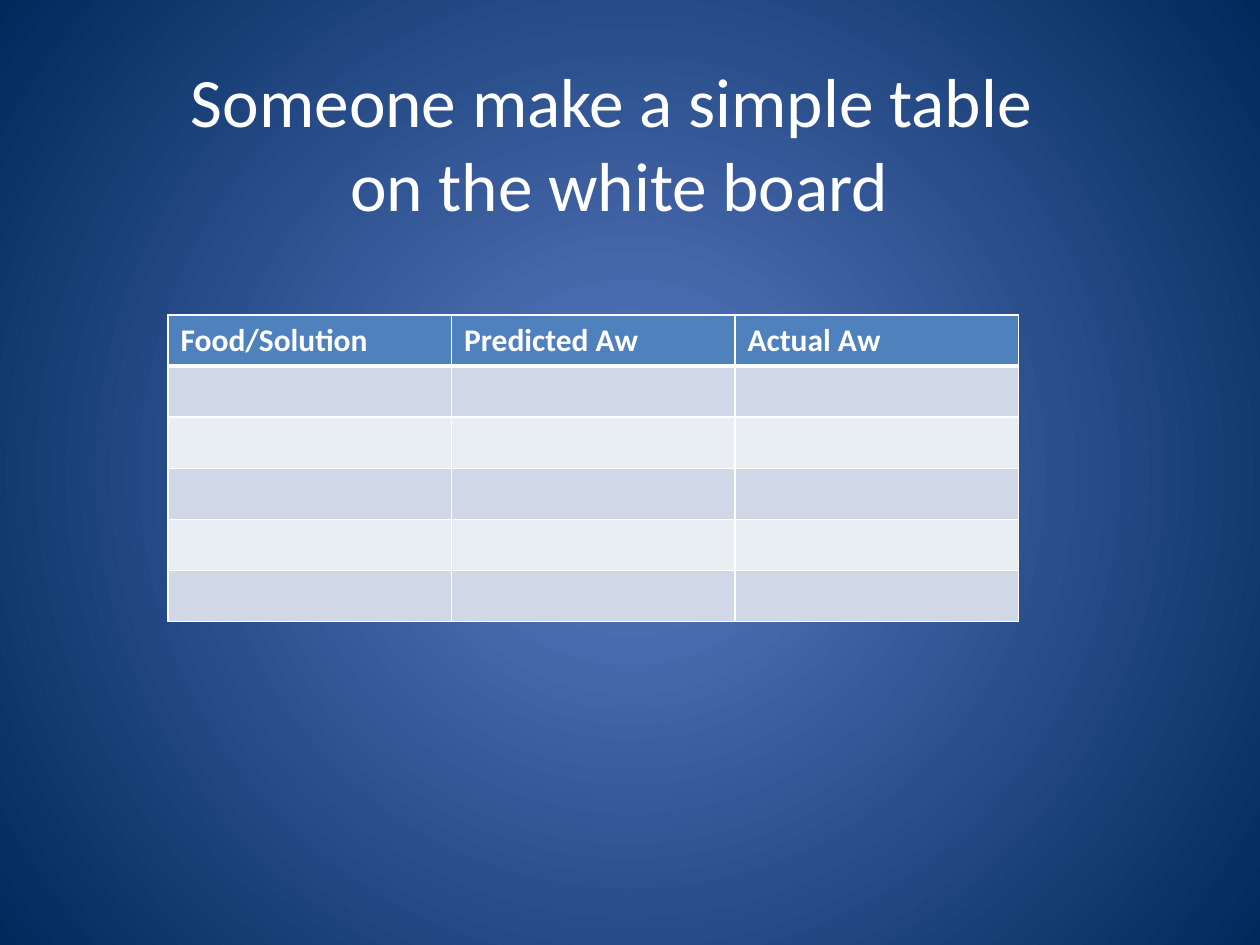
from lxml.etree import SubElement as Sub
from pptx import Presentation
from pptx.dml.color import RGBColor as RGB
from pptx.enum.text import MSO_ANCHOR as Anchor, PP_ALIGN as Align
from pptx.oxml.ns import qn
from pptx.util import Inches, Pt

COLS, ROWS = 120, 90
WHITE, HEAD = "FFFFFF", "4F81BD"
BANDS = ("D0D8E8", "E9EDF4")


def tint(code):
    return RGB.from_string(code)


class Board:
    font = "Calibri"

    def __init__(self, deck):
        self.slide = deck.slides.add_slide(deck.slide_layouts[6])
        self.unit_x = deck.slide_width / COLS
        self.unit_y = deck.slide_height / ROWS

    def box(self, col, row, wide, high):
        """Turn grid columns and rows into slide lengths."""
        return (round(col * self.unit_x), round(row * self.unit_y),
                round(wide * self.unit_x), round(high * self.unit_y))

    def glow(self, inner, outer):
        """Fill the background with a gradient that spreads from the centre."""
        fill = self.slide.background.fill
        fill.gradient()
        for stop, code in zip(fill.gradient_stops, (inner, outer)):
            stop.color.rgb = tint(code)
        grad = self.slide.element.find(".//" + qn("a:gradFill"))
        grad.remove(grad.find(qn("a:lin")))
        ring = Sub(grad, qn("a:path"), {"path": "circle"})
        Sub(ring, qn("a:fillToRect"), dict.fromkeys("ltrb", "50000"))

    def add_text(self, para, text, size, bold=False):
        run = para.add_run()
        run.text = text
        run.font.name, run.font.size = self.font, Pt(size)
        run.font.bold = bold
        run.font.color.rgb = tint(WHITE)

    def title(self, lines, area, size):
        frame = self.slide.shapes.add_textbox(*self.box(*area)).text_frame
        frame.word_wrap = True
        frame.vertical_anchor = Anchor.MIDDLE
        para = frame.paragraphs[0]
        para.alignment = Align.CENTER
        for i, line in enumerate(lines):
            if i:
                para.add_line_break()
            self.add_text(para, line, size)

    def edge(self, cell, side, width):
        props = cell._tc.get_or_add_tcPr()
        line = Sub(props, qn("a:ln" + side), w=str(Pt(width)))
        Sub(Sub(line, qn("a:solidFill")), qn("a:srgbClr"), val=WHITE)

    def table(self, heads, count, area, size):
        """Draw a header row with count empty banded rows below it."""
        grid = self.slide.shapes.add_table(
            count + 1, len(heads), *self.box(*area)).table
        for r, row in enumerate(grid.rows):
            thick = {0: "B", 1: "T"}.get(r)
            for c, cell in enumerate(row.cells):
                for side in "LRTB":
                    self.edge(cell, side, 3 if side == thick else 1)
                cell.fill.solid()
                cell.fill.fore_color.rgb = tint(BANDS[(r - 1) % 2] if r else HEAD)
                if r == 0:
                    para = cell.text_frame.paragraphs[0]
                    self.add_text(para, heads[c], size, True)


def main():
    deck = Presentation()
    deck.slide_width, deck.slide_height = Inches(10), Inches(7.5)
    board = Board(deck)
    board.glow("5E7CC5", "00295C")
    board.title(("Someone make a simple table ", "on the white board"),
                (5, 6, 108, 15), 39.6)
    board.table(("Food/Solution", "Predicted Aw", "Actual Aw"), 5,
                (16, 30, 81, 29.2), 18)
    deck.save("out.pptx")


if __name__ == "__main__":
    main()
